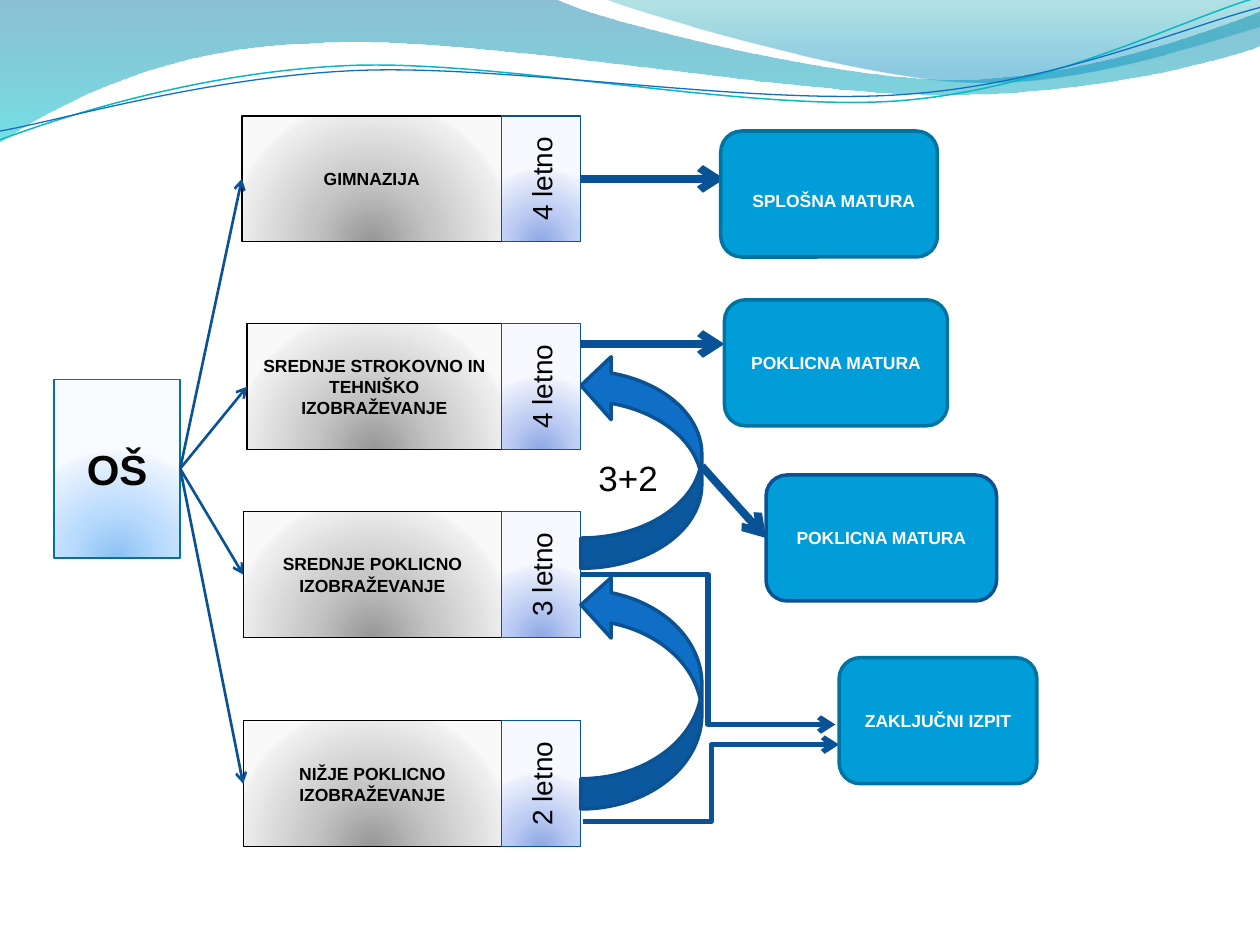
"""Build a slide that maps school paths from primary school to final exams."""
from dataclasses import dataclass
from math import cos, radians, sin
from typing import NamedTuple

from lxml import etree
from pptx import Presentation
from pptx.dml.color import RGBColor
from pptx.enum.shapes import MSO_CONNECTOR, MSO_SHAPE
from pptx.enum.text import MSO_ANCHOR, PP_ALIGN
from pptx.oxml.ns import qn
from pptx.util import Inches, Pt

RECT, ROUNDED = MSO_SHAPE.RECTANGLE, MSO_SHAPE.ROUNDED_RECTANGLE
CURVED_ARROW = MSO_SHAPE.CURVED_RIGHT_ARROW
STRAIGHT, ELBOW = MSO_CONNECTOR.STRAIGHT, MSO_CONNECTOR.ELBOW
CENTER, LEFT, MIDDLE, TOP = PP_ALIGN.CENTER, PP_ALIGN.LEFT, MSO_ANCHOR.MIDDLE, MSO_ANCHOR.TOP
LEFT_SIDE, RIGHT_SIDE = 1, 3
BOX_H, YEARS_X, YEARS_W, TILT = 1, 3.98, 0.63, 2.7


@dataclass(frozen=True)
class Theme:
    """Colours, gradients and type sizes."""
    font: str = "Arial"
    black: str = "000000"
    white: str = "FFFFFF"
    exam: str = "009DD9"
    teal: str = "0074A1"
    navy: str = "0B5292"
    connector: str = "095295"
    arrow: str = "0F6FC6"
    wave_line: str = "0AB8BF"
    grey: tuple = ((0, "979797"), (43, "C6C6C6"), (93, "EEEEEE"), (100, "F9F9F9"))
    sky: tuple = ((0, "8BC2F1"), (43, "B9DBFD"), (93, "EAF3FE"), (100, "F8FBFF"))
    lilac: tuple = ((0, "8DA8E3"), (43, "BBCBF3"), (93, "EAEFFB"), (100, "F7F9FF"))
    back_wave: tuple = ((0, "0074A1", 45), (100, "00C6CF", 55))
    front_wave: tuple = ((0, "00A1A9", 30), (80, "008BBF", 45))
    label: int = 10
    years: int = 16
    note: int = 20
    start: int = 24


class Program(NamedTuple):
    """One school programme and its length."""
    name: str
    years: str
    left: float
    top: float


class Exam(NamedTuple):
    """One final exam."""
    name: str
    left: float
    top: float
    width: float
    line: str
    nudge: tuple = (0.0, 0.0)


class Wave(NamedTuple):
    """One header wave; a segment of three points is a cubic curve."""
    start: tuple
    segments: tuple
    stops: tuple = ()
    line: str = ""
    weight: float = 0
    center: tuple = ()


T = Theme()
PROGRAMS = (
    Program("GIMNAZIJA", "4 letno", 1.92, 0.92),
    Program("SREDNJE STROKOVNO IN TEHNIŠKO IZOBRAŽEVANJE", "4 letno", 1.96, 2.57),
    Program("SREDNJE POKLICNO IZOBRAŽEVANJE", "3 letno", 1.93, 4.06),
    Program("NIŽJE POKLICNO IZOBRAŽEVANJE", "2 letno", 1.93, 5.72),
)
EXAMS = (
    Exam("SPLOŠNA MATURA", 5.72, 1.04, 1.72, T.teal, (0.07, 0.11)),
    Exam("POKLICNA MATURA", 5.75, 2.38, 1.77, T.teal),
    Exam("ZAKLJUČNI IZPIT", 6.66, 5.22, 1.57, T.teal),
    Exam("POKLICNA MATURA", 6.08, 3.77, 1.83, T.navy),
)
WAVES = (
    Wave((0, 0), (
        ((4.4, -0.01),),
        ((4.76, 0.17), (6.64, 0.63), (7.58, 0.63)),
        ((8.53, 0.63), (9.58, 0.26), (10, 0.09)),
        ((10.01, 0.36),),
        ((9.83, 0.44), (8.7, 0.76), (7.46, 0.75)),
        ((6.22, 0.75), (3.82, 0.28), (2.57, 0.34)),
        ((1.29, 0.36), (0.46, 0.83), (-0.01, 1.13)),
        ((0, 0),)), T.back_wave),
    Wave((4.79, -0.01), (
        ((5.09, 0.11), (6.82, 0.62), (7.69, 0.65)),
        ((8.56, 0.69), (9.61, 0.32), (10, 0.21)),
        ((10, 0),),
        ((4.79, -0.01),)), T.front_wave),
    Wave((0, 1.11), (
        ((0.48, 0.93), (1.58, 0.57), (2.77, 0.52)),
        ((3.95, 0.47), (5.93, 0.89), (7.13, 0.8)),
        ((8.33, 0.71), (9.38, 0.15), (9.98, -0.02))), (), T.wave_line, 0.85, (4.99, 0.58)),
    Wave((0, 1.04), (
        ((0.47, 0.96), (1.64, 0.61), (2.83, 0.56)),
        ((4.03, 0.51), (5.97, 0.84), (7.17, 0.75)),
        ((8.36, 0.67), (9.41, 0.21), (10, 0.06))), (), T.arrow, 0.75, (5, 0.59)),
)


def set_gradient(sp, stops: tuple, radial: bool = True) -> None:
    """Fill a shape with a radial or a downward gradient."""
    sp.fill.gradient()
    grad = sp._element.spPr.find(qn("a:gradFill"))
    for child in list(grad):
        grad.remove(child)
    stop_list = etree.SubElement(grad, qn("a:gsLst"))
    for pos, color, *alpha in stops:
        gs = etree.SubElement(stop_list, qn("a:gs"), pos=str(pos * 1000))
        clr = etree.SubElement(gs, qn("a:srgbClr"), val=color)
        for value in alpha:
            etree.SubElement(clr, qn("a:alpha"), val=str(value * 1000))
    if radial:
        way = etree.SubElement(grad, qn("a:path"), {"path": "circle"})
        etree.SubElement(way, qn("a:fillToRect"), l="50000", t="130000", r="50000", b="-30000")
    else:
        etree.SubElement(grad, qn("a:lin"), ang="5400000", scaled="0")


def set_line(sp, color: str, weight: float) -> None:
    """Set the line colour and weight."""
    sp.line.color.rgb = RGBColor.from_string(color)
    sp.line.width = Pt(weight)


def set_text(sp, text: str, *, size: int, color: str = T.black, bold: bool = False,
             align=CENTER, anchor=MIDDLE, vertical: bool = False,
             nudge: tuple = (0.0, 0.0)) -> None:
    """Write formatted text into a shape."""
    tf = sp.text_frame
    tf.word_wrap, tf.vertical_anchor = True, anchor
    tf.margin_left, tf.margin_top = Inches(0.1 + nudge[0]), Inches(0.05 + nudge[1])
    if vertical:
        tf._txBody.bodyPr.set("vert", "vert270")
    p = tf.paragraphs[0]
    p.alignment = align
    r = p.add_run()
    r.text = text
    r.font.name, r.font.size, r.font.bold = T.font, Pt(size), bold
    r.font.color.rgb = RGBColor.from_string(color)


def add_box(s, kind, box: tuple, fill, line: str, weight: float):
    """Add a preset shape with a solid or gradient fill."""
    sp = s.shapes.add_shape(kind, *map(Inches, box))
    if isinstance(fill, str):
        sp.fill.solid()
        sp.fill.fore_color.rgb = RGBColor.from_string(fill)
    else:
        set_gradient(sp, fill)
    set_line(sp, line, weight)
    sp.shadow.inherit = False
    return sp


def add_years(s, prog: Program):
    """Add the upright box with the length of a programme."""
    sp = add_box(s, RECT, (YEARS_X, prog.top, YEARS_W, BOX_H), T.lilac, T.connector, 0.75)
    set_text(sp, prog.years, size=T.years, vertical=True)
    return sp


def add_arrow(s, start: tuple, end: tuple, weight: float, kind=STRAIGHT, source=None, target=None):
    """Add a connector with an arrowhead, joined to the boxes given."""
    c = s.shapes.add_connector(kind, *map(Inches, (*start, *end)))
    if source is not None:
        c.begin_connect(source, RIGHT_SIDE)
    if target is not None:
        c.end_connect(target, LEFT_SIDE)
    set_line(c, T.connector, weight)
    pr = c._element.spPr
    etree.SubElement(pr.find(qn("a:ln")), qn("a:tailEnd"), type="arrow")
    etree.SubElement(pr, qn("a:effectLst"))


def turn(point: tuple, center: tuple) -> tuple:
    """Turn a point clockwise about a centre by the tilt of the wave lines."""
    dx, dy, a = point[0] - center[0], point[1] - center[1], radians(TILT)
    return center[0] + dx * cos(a) - dy * sin(a), center[1] + dx * sin(a) + dy * cos(a)


def add_wave(s, wave: Wave) -> None:
    """Draw a header wave, merging each three-point segment into one cubic curve."""
    points = [wave.start, *(pt for seg in wave.segments for pt in seg)]
    if wave.center:
        points = [turn(pt, wave.center) for pt in points]
    emu = [(Inches(x), Inches(y)) for x, y in points]
    builder = s.shapes.build_freeform(*emu[0])
    builder.add_line_segments(emu[1:], close=bool(wave.stops))
    sp = builder.convert_to_shape()
    steps = iter(list(sp._element.spPr.iter(qn("a:lnTo"))))
    for seg in wave.segments:
        group = [next(steps) for _ in seg]
        if len(group) == 3:
            curve = etree.Element(qn("a:cubicBezTo"))
            group[0].addprevious(curve)
            for step in group:
                curve.append(step[0])
                step.getparent().remove(step)
    sp.shadow.inherit = False
    if wave.stops:
        set_gradient(sp, wave.stops, radial=False)
        sp.line.fill.background()
    else:
        sp.rotation = 360 - TILT
        sp.fill.background()
        set_line(sp, wave.line, wave.weight)


def main() -> None:
    """Build and save the slide."""
    prs = Presentation()
    prs.slide_width, prs.slide_height = Inches(10), Inches(7.5)
    s = prs.slides.add_slide(prs.slide_layouts[6])
    for wave in WAVES:
        add_wave(s, wave)

    school = add_box(s, RECT, (0.43, 3.01, 1, 1.42), T.sky, T.teal, 0.75)
    set_text(school, "OŠ", size=T.start, bold=True)
    for prog in PROGRAMS:
        box = (prog.left, prog.top, YEARS_X - prog.left, BOX_H)
        sp = add_box(s, RECT, box, T.grey, T.black, 0.75)
        set_text(sp, prog.name, size=T.label, bold=True)
        add_arrow(s, (1.43, 3.72), (prog.left, prog.top + BOX_H / 2), 1.5, source=school, target=sp)

    general, technical, vocational, lower = PROGRAMS
    general_years, vocational_years, _ = [add_years(s, p) for p in (general, vocational, lower)]
    for top, height, bend in ((4.56, 1.86, 0.5), (2.81, 1.7, 0.52)):
        sp = add_box(s, CURVED_ARROW, (4.61, top, 0.96, height), T.arrow, T.navy, 2)
        sp.rotation = 180
        sp.adjustments[1] = bend
    add_years(s, technical)
    note = s.shapes.add_textbox(*map(Inches, (4.57, 3.57, 0.94, 0.44)))
    set_text(note, "3+2", size=T.note, align=LEFT, anchor=TOP, nudge=(0.08, 0))

    add_arrow(s, (4.61, 1.42), (5.75, 1.42), 4.5, source=general_years)
    add_arrow(s, (4.61, 2.73), (5.75, 2.73), 4.5)
    add_arrow(s, (4.61, 4.56), (6.63, 5.75), 3, ELBOW, source=vocational_years)
    add_arrow(s, (4.63, 6.52), (6.66, 5.91), 3, ELBOW)
    for exam in EXAMS:
        sp = add_box(s, ROUNDED, (exam.left, exam.top, exam.width, BOX_H), T.exam, exam.line, 2)
        set_text(sp, exam.name, size=T.label, color=T.white, bold=True, nudge=exam.nudge)
    add_arrow(s, (5.57, 3.7), (6.08, 4.27), 4.5, target=sp)
    prs.save("out.pptx")


if __name__ == "__main__":
    main()
